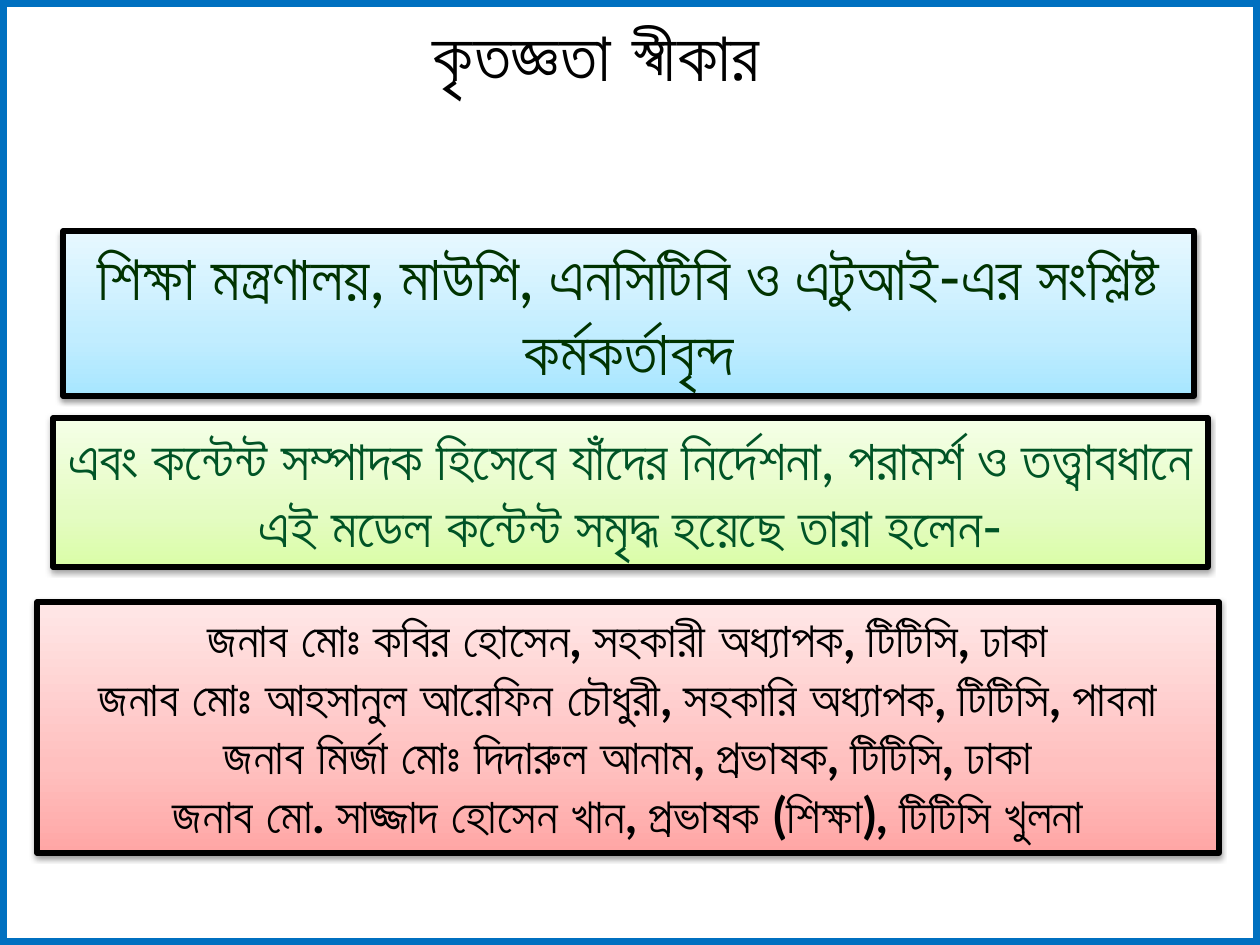
from dataclasses import dataclass

from lxml.etree import SubElement
from pptx import Presentation
from pptx.dml.color import RGBColor
from pptx.enum.shapes import MSO_SHAPE as Preset
from pptx.enum.text import MSO_ANCHOR as Anchor, MSO_AUTO_SIZE as AutoSize, PP_ALIGN as Align
from pptx.oxml.ns import qn
from pptx.util import Emu, Pt

PX_PER_INCH = 126
EMU_PER_INCH = 914400
PAGE_AREA = (0, 0, 1260, 945)
TITLE_AREA = (420, 5, 402, 184)
BLACK = "000000"
GRADIENT_STOPS = (0, 35, 100)


@dataclass(frozen=True)
class Panel:
    area: tuple[int, int, int, int]
    gradient: tuple[str, str, str]
    lines: tuple[str, ...]
    size: int
    color: str
    bold: bool = False


PANELS = (
    Panel((53, 418, 1155, 149), ("DAFDA7", "E4FCC2", "F5FFE7"),
          ("এবং কন্টেন্ট সম্পাদক হিসেবে যাঁদের নির্দেশনা, পরামর্শ ও তত্ত্বাবধানে এই মডেল কন্টেন্ট সমৃদ্ধ হয়েছে তারা হলেন-",),
          32, "005426"),
    Panel((37, 602, 1182, 251), ("FFA6A5", "FFC0BF", "FFE7E7"),
          ("জনাব মোঃ কবির হোসেন, সহকারী অধ্যাপক, টিটিসি, ঢাকা",
           "জনাব মোঃ আহসানুল আরেফিন চৌধুরী, সহকারি অধ্যাপক, টিটিসি, পাবনা",
           "জনাব মির্জা মোঃ দিদারুল আনাম, প্রভাষক, টিটিসি, ঢাকা",
           "জনাব মো. সাজ্জাদ হোসেন খান, প্রভাষক (শিক্ষা), টিটিসি খুলনা"),
          28, BLACK, True),
    Panel((63, 231, 1131, 165), ("A7E6FF", "C1EDFF", "E7F8FF"),
          ("শিক্ষা মন্ত্রণালয়, মাউশি, এনসিটিবি ও এটুআই-এর সংশ্লিষ্ট কর্মকর্তাবৃন্দ",),
          36, "003300"),
)


def px(length: int) -> Emu:
    return Emu(round(length * EMU_PER_INCH / PX_PER_INCH))


def rgb(color: str) -> RGBColor:
    return RGBColor.from_string(color)


def style_font(para, name: str, size: int, color: str, bold: bool) -> None:
    font = para.font
    font.name, font.size, font.bold = name, Pt(size), bold
    font.color.rgb = rgb(color)


def add_rectangle(page, area: tuple[int, int, int, int], line_color: str, line_width: int):
    box = page.shapes.add_shape(Preset.RECTANGLE, *map(px, area))
    box.shadow.inherit = False
    box.fill.background()
    box.line.color.rgb = rgb(line_color)
    box.line.width = Pt(line_width)
    return box


def fill_gradient(box, colors: tuple[str, str, str]) -> None:
    box.fill.gradient()
    gradient = box._element.spPr.find(qn("a:gradFill"))
    stops = gradient.find(qn("a:gsLst"))
    stops.clear()
    for position, color in zip(GRADIENT_STOPS, colors):
        stop = SubElement(stops, qn("a:gs"), pos=str(position * 1000))
        SubElement(stop, qn("a:srgbClr"), val=color)
    gradient.find(qn("a:lin")).set("ang", str(270 * 60000))


def add_shadow(box) -> None:
    effects = box._element.spPr.find(qn("a:effectLst"))
    shadow = SubElement(effects, qn("a:outerShdw"), blurRad=str(Pt(3.1)), dist=str(Pt(1.6)),
                        dir=str(90 * 60000), rotWithShape="0")
    color = SubElement(shadow, qn("a:srgbClr"), val=BLACK)
    SubElement(color, qn("a:alpha"), val="38000")


def add_panel(page, panel: Panel) -> None:
    box = add_rectangle(page, panel.area, BLACK, 3)
    fill_gradient(box, panel.gradient)
    add_shadow(box)
    frame = box.text_frame
    frame.word_wrap = True
    frame.auto_size = AutoSize.SHAPE_TO_FIT_TEXT
    frame.vertical_anchor = Anchor.TOP
    for index, line in enumerate(panel.lines):
        para = frame.add_paragraph() if index else frame.paragraphs[0]
        para.alignment = Align.CENTER
        para.add_run().text = line
        style_font(para, "Lato", panel.size, panel.color, panel.bold)


def add_title(page, title: str) -> None:
    box = page.shapes.add_textbox(*map(px, TITLE_AREA))
    frame = box.text_frame
    frame.word_wrap = False
    frame.auto_size = AutoSize.SHAPE_TO_FIT_TEXT
    para = frame.paragraphs[0]
    span = para.add_run()
    span.text = title
    style_font(para, "Roboto", 40, BLACK, True)
    properties = span._r.get_or_add_rPr()
    properties.set("spc", "50")
    outline = SubElement(properties, qn("a:ln"), w=str(Pt(0.9)))
    fill = SubElement(outline, qn("a:solidFill"))
    SubElement(fill, qn("a:srgbClr"), val=BLACK)


def main() -> None:
    deck = Presentation()
    deck.slide_width, deck.slide_height = map(px, PAGE_AREA[2:])
    page = deck.slides.add_slide(deck.slide_layouts[6])
    add_rectangle(page, PAGE_AREA, "0070C0", 8)
    add_title(page, "কৃতজ্ঞতা স্বীকার")
    for panel in PANELS:
        add_panel(page, panel)
    deck.save("out.pptx")


if __name__ == "__main__":
    main()
